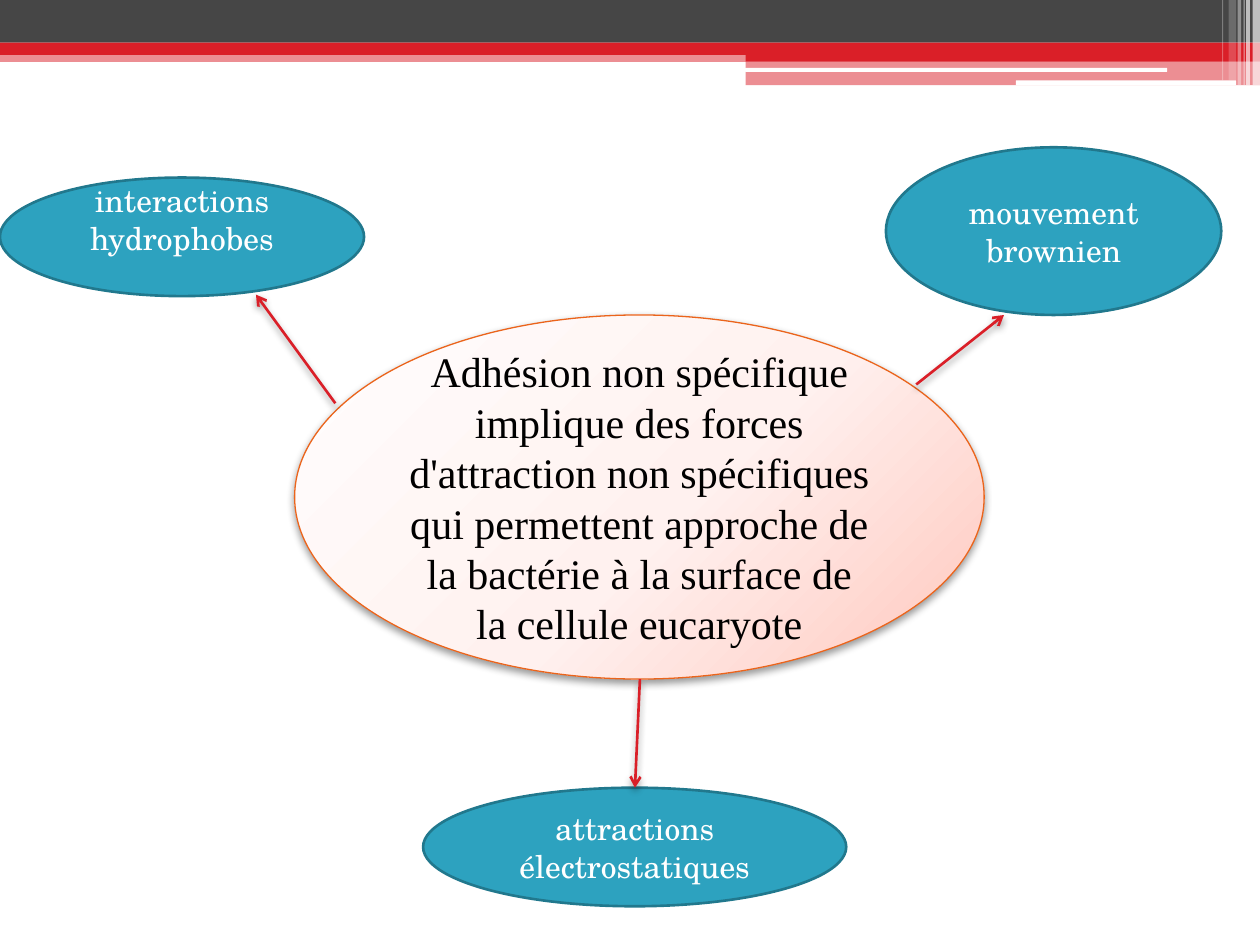
from lxml import etree
from pptx import Presentation
from pptx import util as u
from pptx.dml.color import RGBColor
from pptx.enum import shapes, text
from pptx.oxml import ns, parse_xml

COLORS = {
    "white": "FFFFFF", "black": "000000", "red": "DA1F28", "gray": "464646",
    "teal": "2DA2BF", "dark teal": "21788D", "orange": "EB641B",
}
DRAWING = ns.nsdecls("a")
SHADOW = f"""<a:effectLst {DRAWING}>
  <a:outerShdw blurRad="{u.Pt(4.1)}" dist="{u.Pt(2)}" dir="5400000" rotWithShape="0">
    <a:srgbClr val="{COLORS['black']}"><a:alpha val="40000"/></a:srgbClr>
  </a:outerShdw>
</a:effectLst>"""
GRADIENT = f"""<a:gradFill {DRAWING} rotWithShape="1">
  <a:gsLst>
    <a:gs pos="0"><a:srgbClr val="FFFEFE"/></a:gs>
    <a:gs pos="55000"><a:srgbClr val="FFF1EF"/></a:gs>
    <a:gs pos="100000"><a:srgbClr val="FFC6BC"/></a:gs>
  </a:gsLst>
  <a:path path="circle"><a:fillToRect l="-40000" t="-90000" r="140000" b="190000"/></a:path>
</a:gradFill>"""


def add_filled(kind, box, color):
    shape = slide.shapes.add_shape(kind, *(u.Cm(value) for value in box))
    shape.shadow.inherit = False
    shape.fill.solid()
    shape.fill.fore_color.rgb = RGBColor.from_string(COLORS[color])
    shape.line.fill.background()
    return shape


def add_bubble(box, words, fill, outline, width, font, size, font_color):
    """Add an outlined ellipse with centred text."""
    bubble = add_filled(shapes.MSO_SHAPE.OVAL, box, fill)
    bubble.line.color.rgb = RGBColor.from_string(COLORS[outline])
    bubble.line.width = u.Pt(width)
    frame = bubble.text_frame
    frame.word_wrap = True
    frame.vertical_anchor = text.MSO_ANCHOR.MIDDLE
    paragraph = frame.paragraphs[0]
    paragraph.alignment = text.PP_ALIGN.CENTER
    run = paragraph.add_run()
    run.text = words
    run.font.name = font
    run.font.size = u.Pt(size)
    run.font.color.rgb = RGBColor.from_string(COLORS[font_color])
    return bubble


presentation = Presentation()
presentation.slide_width = u.Cm(25.4)
presentation.slide_height = u.Cm(19.05)
slide = presentation.slides.add_slide(presentation.slide_layouts[6])

# Header bands and stripes: kind, box, colour, opacity in percent
RECTANGLE = shapes.MSO_SHAPE.RECTANGLE
ROUNDED = shapes.MSO_SHAPE.ROUNDED_RECTANGLE
header = [
    (RECTANGLE, (0, 1.02, 25.4, 0.23), "red", 50),
    (RECTANGLE, (0, 0, 25.4, 0.86), "gray", 100),
    (RECTANGLE, (0, 0.86, 25.4, 0.25), "red", 100),
    (RECTANGLE, (15.03, 0.99, 10.37, 0.25), "red", 100),
    (RECTANGLE, (15.03, 1.24, 10.37, 0.48), "red", 50),
    (ROUNDED, (15.02, 1.37, 8.51, 0.08), "white", 100),
    (ROUNDED, (20.48, 1.62, 4.44, 0.1), "white", 100),
]
for left, width, height, opacity in [
    (25.25, 0.15, 1.72, 65), (25.12, 0.08, 1.72, 65), (25.07, 0.02, 1.72, 60),
    (24.95, 0.07, 1.72, 40), (24.77, 0.15, 1.62, 20), (24.64, 0.02, 1.62, 30),
]:
    header.append((RECTANGLE, (left, 0, width, height), "white", opacity))

for kind, box, color, opacity in header:
    band = add_filled(kind, box, color)
    if opacity < 100:
        rgb = band.element.spPr.find(ns.qn("a:solidFill")).find(ns.qn("a:srgbClr"))
        etree.SubElement(rgb, ns.qn("a:alpha"), val=str(opacity * 1000))

# Central statement
center = add_bubble(
    (5.94, 6.35, 13.9, 7.34),
    "Adhésion non spécifique implique des forces d'attraction non spécifiques "
    "qui permettent approche de la bactérie à la surface de la cellule eucaryote",
    "white", "orange", 0.75, "Times New Roman", 24, "black",
)
properties = center.element.spPr
properties.replace(properties.find(ns.qn("a:solidFill")), parse_xml(GRADIENT))
properties.replace(properties.find(ns.qn("a:effectLst")), parse_xml(SHADOW))

# Forces around it
forces = {}
for words, box in [
    ("attractions électrostatiques", (8.53, 15.88, 8.53, 2.39)),
    ("mouvement brownien", (17.86, 2.97, 6.76, 3.38)),
    ("interactions hydrophobes", (0, 3.58, 7.34, 2.39)),
]:
    forces[words] = add_bubble(
        box, words, "teal", "dark teal", 1.5, "TeX Gyre Schola", 18, "white"
    )
forces["interactions hydrophobes"].text_frame.margin_bottom = u.Cm(0.85)

# Arrows from the statement to the forces
for points in [
    (12.9, 13.69, 12.8, 15.88),
    (6.76, 8.13, 5.16, 5.94),
    (18.47, 7.75, 20.24, 6.35),
]:
    arrow = slide.shapes.add_connector(
        shapes.MSO_CONNECTOR.STRAIGHT, *(u.Cm(value) for value in points)
    )
    arrow.line.color.rgb = RGBColor.from_string(COLORS["red"])
    arrow.line.width = u.Pt(1.5)
    properties = arrow.element.spPr
    etree.SubElement(properties.find(ns.qn("a:ln")), ns.qn("a:tailEnd"), type="arrow")
    properties.append(parse_xml(SHADOW))

presentation.save("out.pptx")
